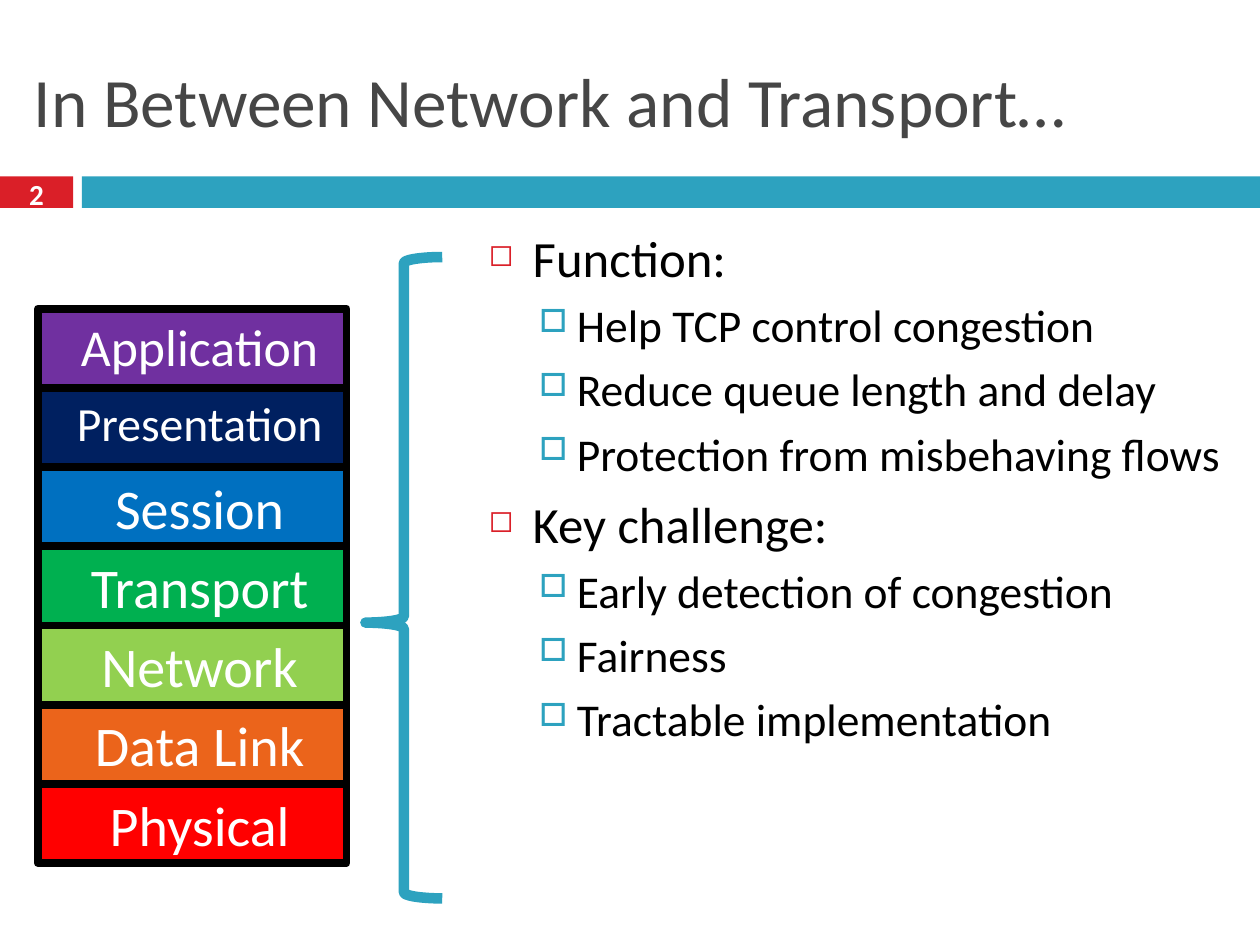
from lxml import etree
from pptx import Presentation
from pptx.dml.color import RGBColor
from pptx.enum.shapes import MSO_SHAPE
from pptx.enum.text import MSO_ANCHOR, PP_ALIGN
from pptx.oxml.ns import qn
from pptx.util import Inches, Pt

RECT, BRACE = MSO_SHAPE.RECTANGLE, MSO_SHAPE.LEFT_BRACE
TOP, MIDDLE = MSO_ANCHOR.TOP, MSO_ANCHOR.MIDDLE
LEFT, CENTER = PP_ALIGN.LEFT, PP_ALIGN.CENTER

RED = RGBColor(0xDA, 0x1F, 0x28)
TEAL = RGBColor(0x2D, 0xA2, 0xBF)
GRAY = RGBColor(0x46, 0x46, 0x46)
BLACK = RGBColor(0, 0, 0)
WHITE = RGBColor(0xFF, 0xFF, 0xFF)
PURPLE = RGBColor(0x70, 0x30, 0xA0)
NAVY = RGBColor(0, 0x20, 0x60)
BLUE = RGBColor(0, 0x70, 0xC0)
GREEN = RGBColor(0, 0xB0, 0x50)
LIME = RGBColor(0x92, 0xD0, 0x50)
ORANGE = RGBColor(0xEB, 0x64, 0x1B)
SCARLET = RGBColor(0xFF, 0, 0)

TITLE = "In Between Network and Transport…"
NUMBER = "2"
LAYERS = [
    ("Application", PURPLE, 29.6),
    ("Presentation", NAVY, 27.2),
    ("Session", BLUE, 32),
    ("Transport", GREEN, 32),
    ("Network", LIME, 32),
    ("Data Link", ORANGE, 32),
    ("Physical", SCARLET, 32),
]
TOPICS = [
    ("Function:", [
        "Help TCP control congestion",
        "Reduce queue length and delay",
        "Protection from misbehaving flows",
    ]),
    ("Key challenge:", [
        "Early detection of congestion",
        "Fairness",
        "Tractable implementation",
    ]),
]
LEVELS = [
    dict(size=29, gap=7, left=0.35, hang=0.35, mark="◻", tint=RED, share=60),
    dict(size=26, gap=5.5, left=0.7, hang=0.3, mark="□", tint=TEAL, share=70),
]

WIDE, HIGH = 10, 7.5
BAR_TOP, BAR_HIGH, TAB, BAR_LEFT = 1.4, 0.25, 0.58, 0.65
STACK_LEFT, STACK_TOP, STACK_WIDE, STACK_HIGH = 0.3, 2.45, 2.45, 4.4

deck = Presentation()
deck.slide_width, deck.slide_height = Inches(WIDE), Inches(HIGH)
slide = deck.slides.add_slide(deck.slide_layouts[6])


def add_box(kind, area, fill=None, line=None, width=0):
    box = slide.shapes.add_shape(kind, *map(Inches, area))
    box.shadow.inherit = False
    if fill is None:
        box.fill.background()
    else:
        box.fill.solid()
        box.fill.fore_color.rgb = fill
    if line is None:
        box.line.fill.background()
    else:
        box.line.color.rgb = line
        box.line.width = Pt(width)
    return box


def add_frame(area, anchor):
    frame = slide.shapes.add_textbox(*map(Inches, area)).text_frame
    frame.word_wrap = True
    frame.vertical_anchor = anchor
    return frame


def write(para, text, size, color, align=LEFT, bold=False):
    para.text = text
    para.alignment = align
    font = para.runs[0].font
    font.name, font.size, font.bold = "Calibri", Pt(size), bold
    font.color.rgb = color


def indent(para, left, hang=0):
    props = para._p.get_or_add_pPr()
    props.set("marL", str(Inches(left)))
    props.set("indent", str(-Inches(hang)))
    return props


def add_item(para, text, rank):
    style = LEVELS[rank]
    write(para, text, style["size"], BLACK)
    para.level = rank
    para.space_before = Pt(style["gap"])
    props = indent(para, style["left"], style["hang"])
    tint = etree.SubElement(props, qn("a:buClr"))
    etree.SubElement(tint, qn("a:srgbClr"), val=str(style["tint"]))
    etree.SubElement(props, qn("a:buSzPct"), val=str(style["share"] * 1000))
    etree.SubElement(props, qn("a:buChar"), char=style["mark"])


add_box(RECT, (0, BAR_TOP, TAB, BAR_HIGH), RED)
add_box(RECT, (BAR_LEFT, BAR_TOP, WIDE - BAR_LEFT, BAR_HIGH), TEAL)

title = add_frame((0.17, 0.25, 9.67, 1.08), MIDDLE)
write(title.paragraphs[0], TITLE, 39.6, GRAY)
number = add_frame((0, 1.37, TAB, 0.33), MIDDLE)
write(number.paragraphs[0], NUMBER, 16.6, WHITE, CENTER, True)

body = add_frame((3.78, 1.75, 6.06, 5.58), TOP)
items = [(text, rank) for head, points in TOPICS
         for text, rank in [(head, 0)] + [(point, 1) for point in points]]
for i, (text, rank) in enumerate(items):
    para = body.add_paragraph() if i else body.paragraphs[0]
    add_item(para, text, rank)

step = STACK_HIGH / len(LAYERS)
for i, (name, fill, size) in enumerate(LAYERS):
    area = (STACK_LEFT, STACK_TOP + i * step, STACK_WIDE, step)
    layer = add_box(RECT, area, fill, BLACK, 4.5)
    layer.text_frame.vertical_anchor = TOP
    para = layer.text_frame.paragraphs[0]
    write(para, name, size, WHITE, CENTER)
    indent(para, 0.12)

brace = add_box(BRACE, (2.9, 2.04, 0.61, 5.09), line=TEAL, width=6)
brace.adjustments[0] = 0.08
brace.adjustments[1] = 0.57

deck.save("out.pptx")
